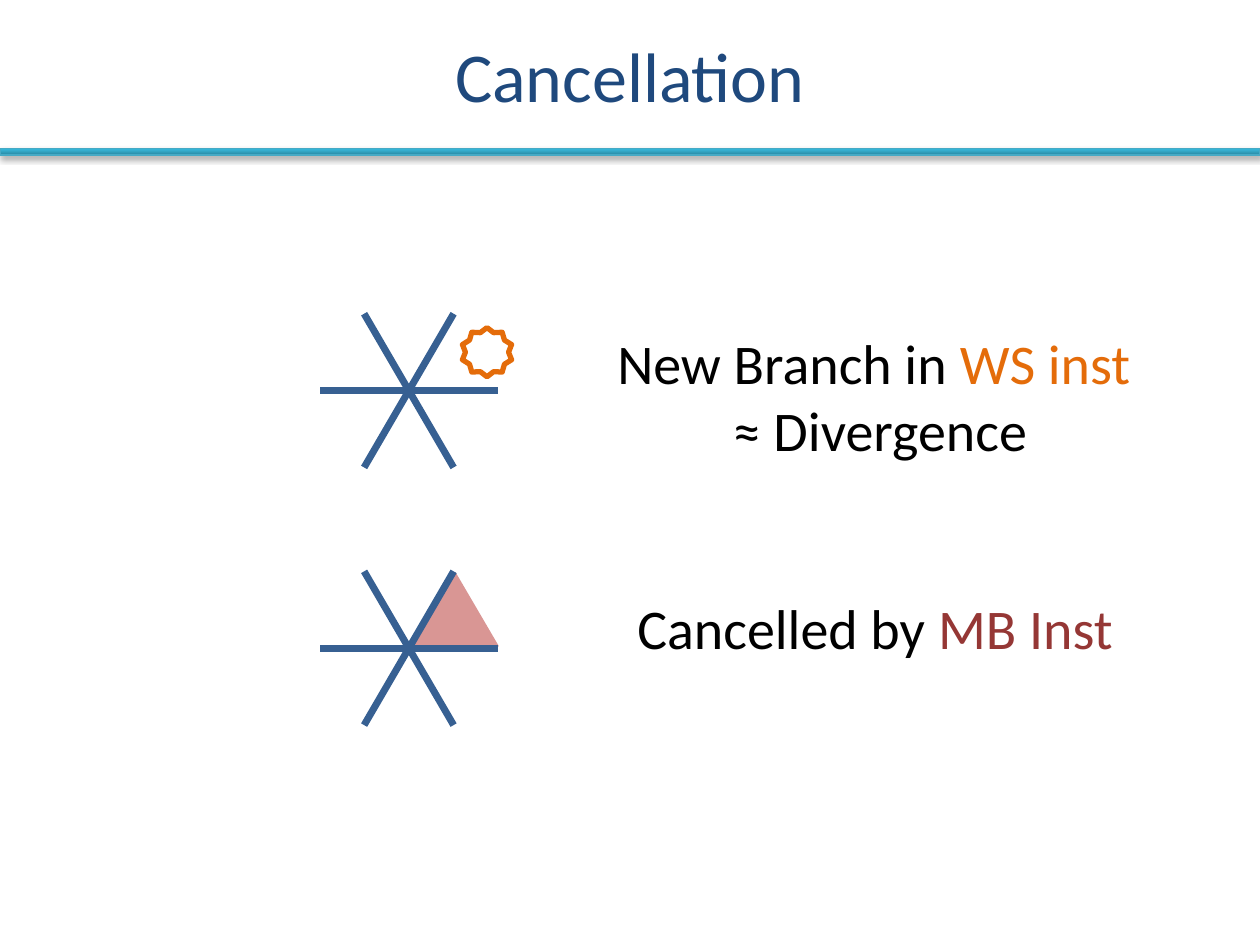
from copy import deepcopy

from lxml.etree import SubElement
from pptx import Presentation
from pptx.dml.color import RGBColor
from pptx.enum.shapes import MSO_CONNECTOR as Connector, MSO_SHAPE as Shape
from pptx.enum.text import MSO_ANCHOR as Anchor, MSO_AUTO_SIZE as AutoSize, PP_ALIGN as Align
from pptx.oxml.ns import qn
from pptx.util import Inches, Pt

COLORS = {
    "title": "1F497D", "text": "000000", "branch": "E46C0A", "cancel": "953735",
    "spoke": "376092", "wedge": "D99694", "bar_line": "46AAC5",
    "bar_dark": "2A88A2", "bar_mid": "37B1D2", "bar_light": "34B4D6",
}


def color(name):
    return RGBColor.from_string(COLORS[name])


def add_text(lines, left, top, width, height, size=32, wrap=False, fit=AutoSize.SHAPE_TO_FIT_TEXT):
    box = page.shapes.add_textbox(Inches(left), Inches(top), Inches(width), Inches(height))
    frame = box.text_frame
    frame.word_wrap = wrap
    frame.auto_size = fit
    frame.vertical_anchor = Anchor.MIDDLE
    for index, line in enumerate(lines):
        para = frame.add_paragraph() if index else frame.paragraphs[0]
        para.alignment = Align.CENTER
        for words, ink in line:
            span = para.add_run()
            span.text = words
            span.font.name = "Calibri"
            span.font.size = Pt(size)
            span.font.color.rgb = color(ink)


deck = Presentation()
deck.slide_width = Inches(10)
deck.slide_height = Inches(7.5)
page = deck.slides.add_slide(deck.slide_layouts[6])

bar = page.shapes.add_shape(Shape.RECTANGLE, 0, Inches(1.18), Inches(10), Inches(0.05))
bar.shadow.inherit = False
bar.line.color.rgb = color("bar_line")
bar.line.width = Pt(0.75)
bar.fill.gradient()
bar.fill.gradient_angle = 90
stop_list = bar._element.spPr.find(".//" + qn("a:gsLst"))
stop_list.append(deepcopy(stop_list[-1]))
for stop, (position, name) in zip(
    bar.fill.gradient_stops, [(0, "bar_dark"), (0.8, "bar_mid"), (1, "bar_light")]
):
    stop.position = position
    stop.color.rgb = color(name)
effects = bar._element.spPr.find(qn("a:effectLst"))
shadow = SubElement(effects, qn("a:outerShdw"), blurRad=str(Pt(3.1)), dist=str(Pt(1.8)),
                    dir="5400000", rotWithShape="0")
shade = SubElement(shadow, qn("a:srgbClr"), val="000000")
SubElement(shade, qn("a:alpha"), val="35000")

wedge = page.shapes.add_shape(
    Shape.ISOSCELES_TRIANGLE, Inches(3.27), Inches(4.54), Inches(0.69), Inches(0.59))
wedge.shadow.inherit = False
wedge.fill.solid()
wedge.fill.fore_color.rgb = color("wedge")
wedge.line.fill.background()

center_x = 3.245
for center_y in (3.1, 5.145):
    for dx, dy in ((0.355, 0.61), (-0.355, 0.61), (-0.705, 0)):
        spoke = page.shapes.add_connector(
            Connector.STRAIGHT,
            Inches(center_x - dx), Inches(center_y - dy),
            Inches(center_x + dx), Inches(center_y + dy))
        spoke.line.color.rgb = color("spoke")
        spoke.line.width = Pt(4)
        SubElement(spoke._element.spPr, qn("a:effectLst"))

star = page.shapes.add_shape(
    Shape.STAR_10_POINT, Inches(3.67), Inches(2.6), Inches(0.39), Inches(0.39))
star.adjustments[0] = 0.417
star.shadow.inherit = False
star.fill.background()
star.line.color.rgb = color("branch")
star.line.width = Pt(3)

add_text([[("Cancellation", "title")]], 0, 0, 10, 1.18, size=40, wrap=True, fit=AutoSize.NONE)
add_text([[("New Branch in ", "text"), ("WS inst", "branch")], [(" ≈ Divergence", "text")]],
         4.78, 2.55, 4.31, 1.18)
add_text([[("Cancelled by ", "text"), ("MB Inst", "cancel")]], 4.94, 4.66, 4.01, 0.64)

deck.save("out.pptx")
